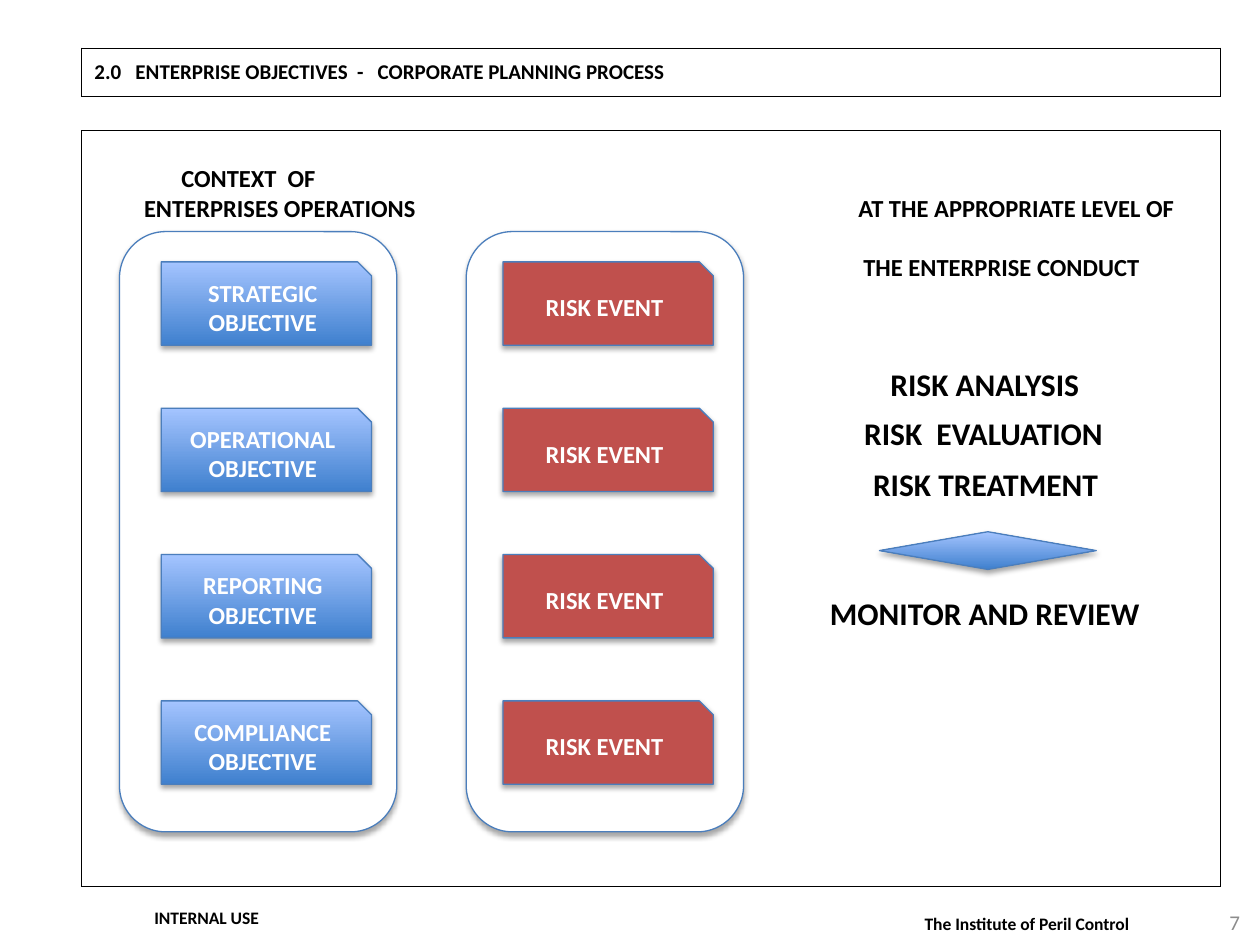
from dataclasses import dataclass

from lxml import etree
from pptx import Presentation
from pptx.dml.color import RGBColor
from pptx.enum import shapes as sh, text as tx
from pptx.oxml.ns import qn
from pptx.util import Cm, Pt


@dataclass(frozen=True)
class Theme:
    face: str = "Calibri"
    black: str = "000000"
    white: str = "FFFFFF"
    grey: str = "8C8C8C"
    edge: str = "4B7EBC"
    red: str = "C0504D"
    blue: tuple = ("3F80CE", "A4C4FF")  # bottom, top
    note: int = 10
    title: int = 12
    body: int = 14
    step: int = 18


T = Theme()
KIND = sh.MSO_SHAPE
ALIGN = tx.PP_ALIGN
MID = tx.MSO_ANCHOR.MIDDLE


def rgb(code):
    return RGBColor.from_string(code)


def write(frame, lines, size, color=T.black, bold=True, align=ALIGN.LEFT):
    """Fill a text frame with one paragraph per line."""
    frame.text = "\n".join(lines)
    for para in frame.paragraphs:
        para.alignment = align
        font = para.font
        font.name, font.size, font.bold = T.face, Pt(size), bold
        font.color.rgb = rgb(color)


def label(slide, line, box, size, wrap=False, anchor=tx.MSO_ANCHOR.TOP, **look):
    frame = slide.shapes.add_textbox(*map(Cm, box)).text_frame
    frame.word_wrap = wrap
    frame.vertical_anchor = anchor
    write(frame, [line], size, **look)


def block(slide, kind, box, fill, lines=()):
    """Add an outlined shape with a soft shadow; a pair of colours is a gradient."""
    shape = slide.shapes.add_shape(kind, *map(Cm, box))
    if isinstance(fill, tuple):
        shape.fill.gradient()
        shape.fill.gradient_angle = 90
        for stop, code in zip(shape.fill.gradient_stops, fill):
            stop.color.rgb = rgb(code)
    else:
        shape.fill.solid()
        shape.fill.fore_color.rgb = rgb(fill)
    shape.line.color.rgb = rgb(T.edge)
    shape.line.width = Pt(0.75)
    # Shadow
    shape.shadow.inherit = False
    glow = etree.SubElement(
        shape.element.spPr.find(qn("a:effectLst")), qn("a:outerShdw"),
        blurRad=str(Pt(3.1)), dist=str(Pt(1.8)), dir="5400000", rotWithShape="0")
    tint = etree.SubElement(glow, qn("a:srgbClr"), val=T.black)
    etree.SubElement(tint, qn("a:alpha"), val="35000")
    if lines:
        shape.text_frame.vertical_anchor = MID
        write(shape.text_frame, lines, T.body, T.white, align=ALIGN.CENTER)


def border(cell, sides):
    """Draw the named sides of a cell and hide the others."""
    props = cell._tc.get_or_add_tcPr()
    for side in "LRTB":
        line = etree.SubElement(props, qn("a:ln" + side), w=str(Pt(0.75)))
        if side in sides:
            paint = etree.SubElement(line, qn("a:solidFill"))
            etree.SubElement(paint, qn("a:srgbClr"), val=T.black)
        else:
            etree.SubElement(line, qn("a:noFill"))


def tabs(para, *stops):
    props = para._p.get_or_add_pPr()
    group = etree.Element(qn("a:tabLst"))
    for stop in stops:
        etree.SubElement(group, qn("a:tab"), pos=str(Cm(stop)), algn="l")
    props.find(qn("a:defRPr")).addprevious(group)


def indent(para, left):
    props = para._p.get_or_add_pPr()
    props.set("marL", str(Cm(left)))
    props.set("indent", "0")


def layout(slide):
    """Add the table that frames the title and the content."""
    table = slide.shapes.add_table(
        3, 1, Cm(1.65), Cm(0.97), Cm(22.96), Cm(16.9)).table
    table.first_row = table.horz_banding = False
    cells = [table.cell(row, 0) for row in range(3)]
    for row, high, cell, sides in zip(
            table.rows, (0.97, 0.7, 15.23), cells, ("LRTB", "TB", "LRTB")):
        row.height = Cm(high)
        border(cell, sides)
        cell.fill.solid()
        cell.fill.fore_color.rgb = rgb(T.white)
    head, gap, main_cell = cells

    head.vertical_anchor = MID
    write(head.text_frame,
          ["2.0   ENTERPRISE OBJECTIVES  -   CORPORATE PLANNING PROCESS"], T.title)

    gap.margin_top = gap.margin_bottom = 0
    etree.SubElement(gap.text_frame.paragraphs[0]._p, qn("a:endParaRPr"), sz="800")

    # Column headings
    main_cell.margin_top = Cm(0.67)
    frame = main_cell.text_frame
    write(frame, ["CONTEXT  OF",
                  "\tENTERPRISES OPERATIONS\tAT THE APPROPRIATE LEVEL OF",
                  "THE ENTERPRISE CONDUCT"], T.body)
    first, both, last = frame.paragraphs
    indent(first, 1.75)
    tabs(both, 1, 15.4)
    indent(last, 15.5)
    last.space_before = Pt(17)


def column(slide, left, inset, fill, items):
    """Add a rounded panel with evenly spaced cards."""
    block(slide, KIND.FLOWCHART_ALTERNATE_PROCESS,
          (left, 4.67, 5.59, 12.1), T.white)
    for i, lines in enumerate(items):
        block(slide, KIND.SNIP_1_RECTANGLE,
              (left + inset, 5.28 + 2.95 * i, 4.24, 1.68), fill, lines)


def main():
    deck = Presentation()
    deck.slide_width, deck.slide_height = Cm(25.4), Cm(19.05)
    slide = deck.slides.add_slide(deck.slide_layouts[6])

    layout(slide)

    # Footer
    label(slide, "The Institute of Peril Control", (18.39, 18.29, 5.54, 0.69), T.note)
    label(slide, "7", (19.33, 18.08, 5.92, 1.02), T.title, True, MID,
          color=T.grey, bold=False, align=ALIGN.RIGHT)
    label(slide, "INTERNAL USE", (1.04, 17.98, 6.25, 1.02), T.note, True, MID,
          align=ALIGN.CENTER)

    # Objectives and their risks
    goals = ("STRATEGIC", "OPERATIONAL", "REPORTING", "COMPLIANCE")
    column(slide, 2.41, 0.84, T.blue, [(goal, "OBJECTIVE") for goal in goals])
    column(slide, 9.4, 0.74, T.red, [("RISK EVENT",)] * len(goals))

    # Risk process
    for line, left, top, wide in (
            ("RISK ANALYSIS", 17.7, 7.24, 4.42),
            ("RISK  EVALUATION", 17.17, 8.23, 5.49),
            ("RISK TREATMENT", 17.35, 9.25, 5.16),
            ("MONITOR AND REVIEW", 16.48, 11.86, 6.86)):
        label(slide, line, (left, top, wide, 1.02), T.step)
    block(slide, KIND.DIAMOND, (17.73, 10.72, 4.37, 0.76), T.blue)

    deck.save("out.pptx")


if __name__ == "__main__":
    main()
